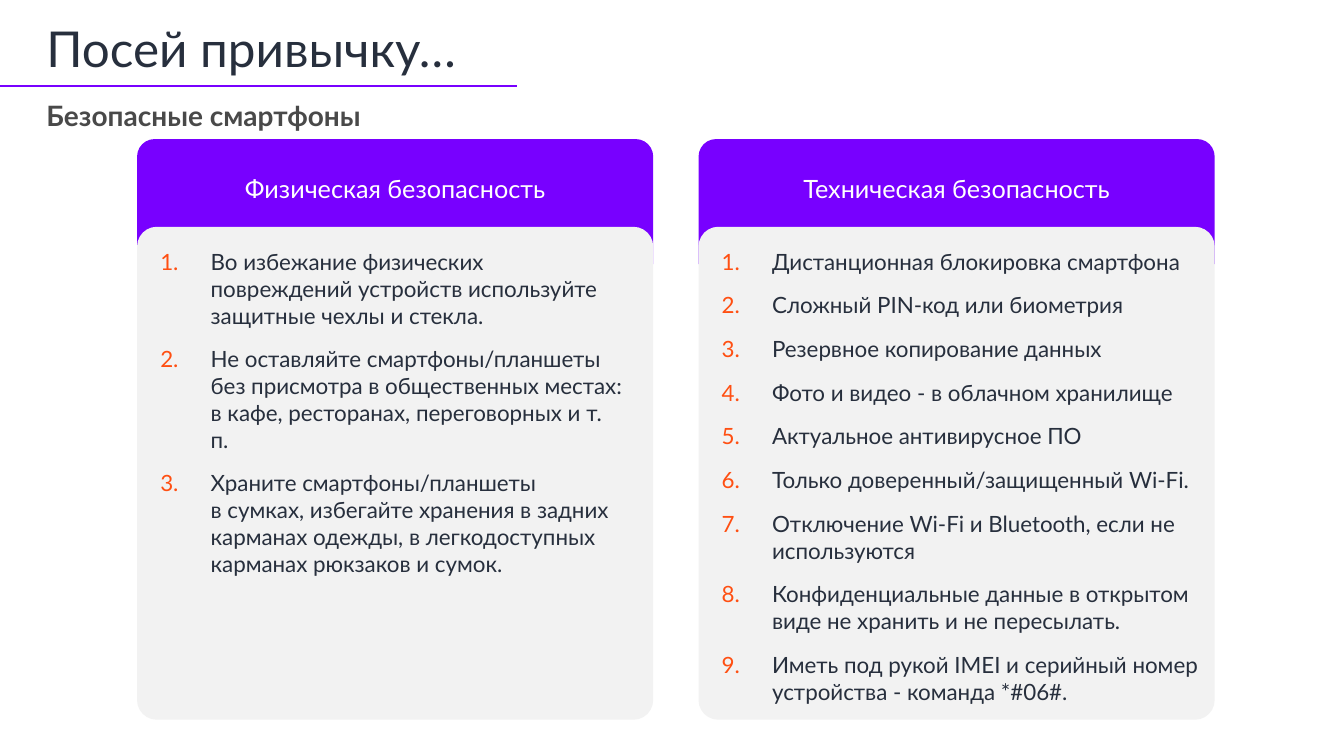
from dataclasses import dataclass

from lxml.etree import SubElement
from pptx import Presentation
from pptx.dml.color import RGBColor
from pptx.enum.shapes import MSO_CONNECTOR as Connector, MSO_SHAPE as Preset
from pptx.enum.text import MSO_ANCHOR as Anchor, PP_ALIGN as Align
from pptx.oxml.ns import qn
from pptx.shapes.autoshape import Shape
from pptx.slide import Slide
from pptx.text.text import TextFrame, _Paragraph as Paragraph
from pptx.util import Emu, Inches, Pt

CELL = Inches(0.1)
COLUMNS, ROWS = 133.33, 75
FONT = "Lato"
INK, GREY, WHITE = "272F3D", "494949", "FFFFFF"
VIOLET, PALE, ORANGE = "7800FF", "F2F2F2", "FF4F12"
MARGIN = 4.6
CARD_LEFT, CARD_STEP, CARD_WIDTH = 13.6, 55.7, 51.2
HEADER_TOP, HEADER_HEIGHT = 13.8, 12.4
BODY_TOP, BODY_HEIGHT = 22.5, 48.9
LIST_INSET, LIST_TOP = 2.3, 24.6


@dataclass
class Area:
    """A rectangle in grid columns and rows."""
    column: float
    row: float
    width: float
    height: float

    def lengths(self) -> list[Emu]:
        """Return left, top, width and height as slide lengths."""
        return [cells(n) for n in (self.column, self.row, self.width, self.height)]


@dataclass
class Card:
    """A headed card with a numbered list."""
    heading: str
    items: list[str]
    list_width: float
    list_height: float


CARDS = [
    Card("Физическая безопасность", [
        "Во избежание физических повреждений устройств используйте защитные чехлы и стекла.",
        "Не оставляйте смартфоны/планшеты без присмотра в общественных местах: "
        "в кафе, ресторанах, переговорных и т. п.",
        "Храните смартфоны/планшеты \nв сумках, избегайте хранения в задних карманах одежды, "
        "в легкодоступных карманах рюкзаков и сумок.",
    ], 46.1, 33),
    Card("Техническая безопасность", [
        "Дистанционная блокировка смартфона",
        "Сложный PIN-код или биометрия",
        "Резервное копирование данных",
        "Фото и видео - в облачном хранилище",
        "Актуальное антивирусное ПО",
        "Только доверенный/защищенный Wi-Fi.",
        "Отключение Wi-Fi и Bluetooth, если не используются",
        "Конфиденциальные данные в открытом виде не хранить и не пересылать.",
        "Иметь под рукой IMEI и серийный номер устройства - команда *#06#.",
    ], 48.8, 45.8),
]


def cells(count: float) -> Emu:
    """Convert a number of grid cells to a length."""
    return Emu(round(count * CELL))


def color(code: str) -> RGBColor:
    """Convert a hex string to a colour."""
    return RGBColor.from_string(code)


def add_text(para: Paragraph, text: str, size: float, ink: str, bold: bool = False) -> None:
    """Add runs to a paragraph, with a line break at each newline."""
    for number, part in enumerate(text.split("\n")):
        if number:
            para.add_line_break()
        span = para.add_run()
        span.text = part
        span.font.name = FONT
        span.font.size = Pt(size)
        span.font.bold = bold
        span.font.color.rgb = color(ink)


def add_box(page: Slide, area: Area) -> TextFrame:
    """Add a wrapping text box without insets."""
    frame = page.shapes.add_textbox(*area.lengths()).text_frame
    frame.word_wrap = True
    frame.margin_left = frame.margin_top = frame.margin_right = frame.margin_bottom = 0
    return frame


def add_panel(page: Slide, preset: Preset, area: Area, fill: str, corner: float) -> Shape:
    """Add a plain filled shape with rounded corners."""
    panel = page.shapes.add_shape(preset, *area.lengths())
    panel.shadow.inherit = False
    panel.adjustments[0] = corner
    panel.fill.solid()
    panel.fill.fore_color.rgb = color(fill)
    panel.line.fill.background()
    return panel


def number_paragraph(para: Paragraph) -> None:
    """Give a paragraph a hanging automatic number."""
    para.space_after = Pt(12)
    props = para._p.get_or_add_pPr()
    props.set("marL", str(cells(5)))
    props.set("indent", str(cells(-5)))
    SubElement(SubElement(props, qn("a:buClr")), qn("a:srgbClr"), val=ORANGE)
    SubElement(props, qn("a:buAutoNum"), type="arabicPeriod")


def add_card(page: Slide, card: Card, left: float) -> None:
    """Draw the header, body and list of a card."""
    header = add_panel(page, Preset.ROUND_2_SAME_RECTANGLE,
                       Area(left, HEADER_TOP, CARD_WIDTH, HEADER_HEIGHT), VIOLET, 0.14)
    frame = header.text_frame
    frame.word_wrap = True
    frame.vertical_anchor = Anchor.MIDDLE
    frame.margin_left = frame.margin_right = cells(0.5)
    frame.margin_top, frame.margin_bottom = 0, cells(3.1)
    frame.paragraphs[0].alignment = Align.CENTER
    add_text(frame.paragraphs[0], card.heading, 18, WHITE)
    add_panel(page, Preset.ROUNDED_RECTANGLE,
              Area(left, BODY_TOP, CARD_WIDTH, BODY_HEIGHT), PALE, 0.04)
    box = add_box(page, Area(left + LIST_INSET, LIST_TOP, card.list_width, card.list_height))
    for number, item in enumerate(card.items):
        para = box.add_paragraph() if number else box.paragraphs[0]
        number_paragraph(para)
        add_text(para, item, 16, INK)


def add_rule(page: Slide, row: float, width: float) -> None:
    """Draw the line under the title from the slide's left edge."""
    rule = page.shapes.add_connector(Connector.STRAIGHT, 0, cells(row), cells(width), cells(row))
    rule.line.color.rgb = color(VIOLET)
    rule.line.width = Pt(1.5)
    SubElement(rule._element.spPr, qn("a:effectLst"))


def main() -> None:
    """Build and save the slide."""
    deck = Presentation()
    deck.slide_width, deck.slide_height = cells(COLUMNS), cells(ROWS)
    page = deck.slides.add_slide(deck.slide_layouts[6])
    title = add_box(page, Area(MARGIN, 2.5, 115.9, 5.9)).paragraphs[0]
    title.line_spacing = Pt(37)
    add_text(title, "Посей привычку…", 35.3, INK)
    subtitle = add_box(page, Area(MARGIN, 9.8, 47.6, 3.4)).paragraphs[0]
    add_text(subtitle, "Безопасные смартфоны", 20, GREY, bold=True)
    for number, card in enumerate(CARDS):
        add_card(page, card, CARD_LEFT + number * CARD_STEP)
    add_rule(page, 8.5, 51.3)
    deck.save("out.pptx")


if __name__ == "__main__":
    main()
